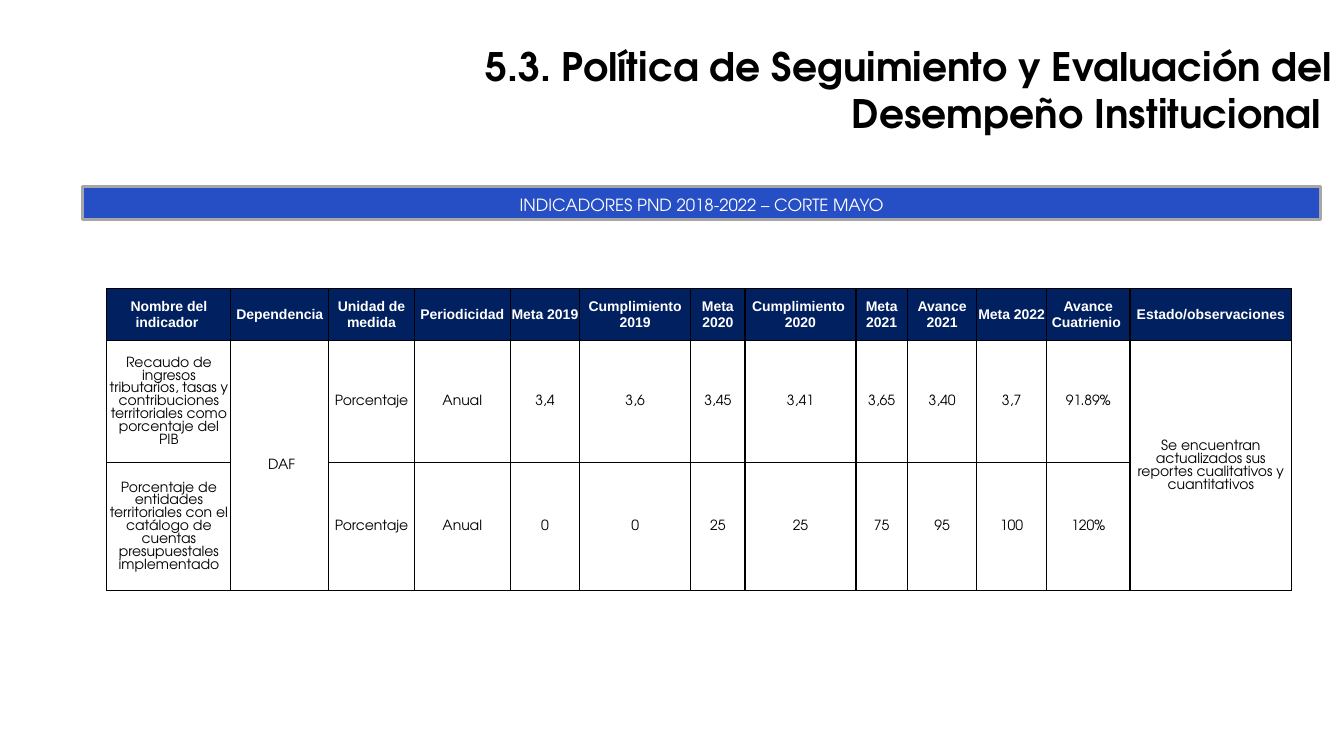
from lxml import etree
from pptx import Presentation
from pptx import util as u
from pptx.dml.color import RGBColor
from pptx.enum import shapes, text
from pptx.oxml import ns

HEADERS = ["Nombre del indicador ", "Dependencia", "Unidad de medida", "Periodicidad",
           "Meta 2019", "Cumplimiento 2019", "Meta 2020", "Cumplimiento  2020",
           "Meta 2021", "Avance 2021", "Meta 2022", "Avance Cuatrienio ",
           "Estado/observaciones"]
REVENUE = ["Recaudo de ingresos tributarios, tasas y contribuciones territoriales "
           "como porcentaje del PIB", " DAF", "Porcentaje", "Anual", "3,4", "3,6", "3,45",
           "3,41", "3,65", "3,40", "3,7", "91.89%",
           "Se encuentran actualizados sus reportes cualitativos y cuantitativos"]
CATALOG = ["Porcentaje de entidades territoriales con el catálogo de cuentas "
           "presupuestales implementado", "", "Porcentaje", "Anual", "0", "0", "25",
           "25", "75", "95", "100", "120%", ""]
COLUMN_WIDTHS = [1.23, 0.97, 0.85, 0.95, 0.69, 1.1, 0.54, 1.1, 0.51, 0.69, 0.69, 0.83, 1.6]
ROW_HEIGHTS = [0.52, 1.21, 1.27]
MERGED_COLUMNS = [1, 12]


def color(value):
    return RGBColor.from_string(value)


class SlideBuilder:
    body_font = "TeX Gyre Adventor"
    header_font = "Arial"
    black, white = "000000", "FFFFFF"
    navy, blue, gray = "002060", "264FC6", "A6A6A6"

    def __init__(self, slide):
        self.slide = slide

    def add_text(self, paragraph, words, size, hue, font=body_font, bold=False,
                 align=text.PP_ALIGN.CENTER):
        paragraph.alignment = align
        run = paragraph.add_run()
        run.text = words
        run.font.size = u.Pt(size)
        run.font.name = font
        run.font.bold = bold
        run.font.color.rgb = color(hue)

    def title(self, words, left, top, width, height):
        shape = self.slide.shapes.title
        shape.left, shape.top = u.Inches(left), u.Inches(top)
        shape.width, shape.height = u.Inches(width), u.Inches(height)
        frame = shape.text_frame
        frame.word_wrap = True
        frame.auto_size = text.MSO_AUTO_SIZE.NONE
        frame.vertical_anchor = text.MSO_ANCHOR.MIDDLE
        self.add_text(frame.paragraphs[0], words, 28, self.black, bold=True,
                      align=text.PP_ALIGN.RIGHT)

    def banner(self, words, left, top, width, height):
        shape = self.slide.shapes.add_shape(
            shapes.MSO_SHAPE.RECTANGLE, u.Inches(left), u.Inches(top),
            u.Inches(width), u.Inches(height))
        shape.shadow.inherit = False
        shape.fill.solid()
        shape.fill.fore_color.rgb = color(self.blue)
        shape.line.color.rgb = color(self.gray)
        shape.line.width = u.Pt(2.25)
        frame = shape.text_frame
        frame.word_wrap = True
        frame.vertical_anchor = text.MSO_ANCHOR.TOP
        paragraph = frame.paragraphs[0]
        paragraph.line_spacing = 1.15
        self.add_text(paragraph, words, 12, self.white)

    def border(self, cell):
        properties = cell._tc.get_or_add_tcPr()
        for position, side in enumerate(["lnL", "lnR", "lnT", "lnB"]):
            line = etree.Element(ns.qn("a:" + side), w=str(u.Pt(1)))
            fill = etree.SubElement(line, ns.qn("a:solidFill"))
            etree.SubElement(fill, ns.qn("a:srgbClr"), val=self.black)
            properties.insert(position, line)

    def cell(self, cell, words, is_header):
        cell.fill.solid()
        cell.fill.fore_color.rgb = color(self.navy if is_header else self.white)
        cell.vertical_anchor = text.MSO_ANCHOR.MIDDLE
        cell.margin_left = cell.margin_right = cell.margin_top = u.Inches(0.01)
        cell.margin_bottom = 0
        self.border(cell)
        if not words:
            return
        paragraph = cell.text_frame.paragraphs[0]
        if is_header:
            self.add_text(paragraph, words, 10, self.white, self.header_font, True)
        else:
            self.add_text(paragraph, words, 10, self.black)

    def table(self, rows, left, top):
        table = self.slide.shapes.add_table(
            len(rows), len(COLUMN_WIDTHS), u.Inches(left), u.Inches(top),
            u.Inches(sum(COLUMN_WIDTHS)), u.Inches(sum(ROW_HEIGHTS))).table
        table.horz_banding = False
        for column, width in zip(table.columns, COLUMN_WIDTHS):
            column.width = u.Inches(width)
        for row, height in zip(table.rows, ROW_HEIGHTS):
            row.height = u.Inches(height)
        for row_index, row in enumerate(rows):
            for column_index, words in enumerate(row):
                self.cell(table.cell(row_index, column_index), words, row_index == 0)
        for column_index in MERGED_COLUMNS:
            table.cell(1, column_index).merge(table.cell(2, column_index))


def main():
    presentation = Presentation()
    presentation.slide_width = u.Inches(13.33)
    presentation.slide_height = u.Inches(7.5)
    builder = SlideBuilder(presentation.slides.add_slide(presentation.slide_layouts[5]))
    builder.table([HEADERS, REVENUE, CATALOG], 1.06, 2.86)
    builder.banner("INDICADORES PND 2018-2022 – CORTE MAYO", 0.82, 1.85, 12.28, 0.33)
    builder.title("5.3. Política de Seguimiento y Evaluación del Desempeño Institucional ",
                  2.49, 0.62, 10.82, 0.54)
    presentation.save("out.pptx")


if __name__ == "__main__":
    main()
